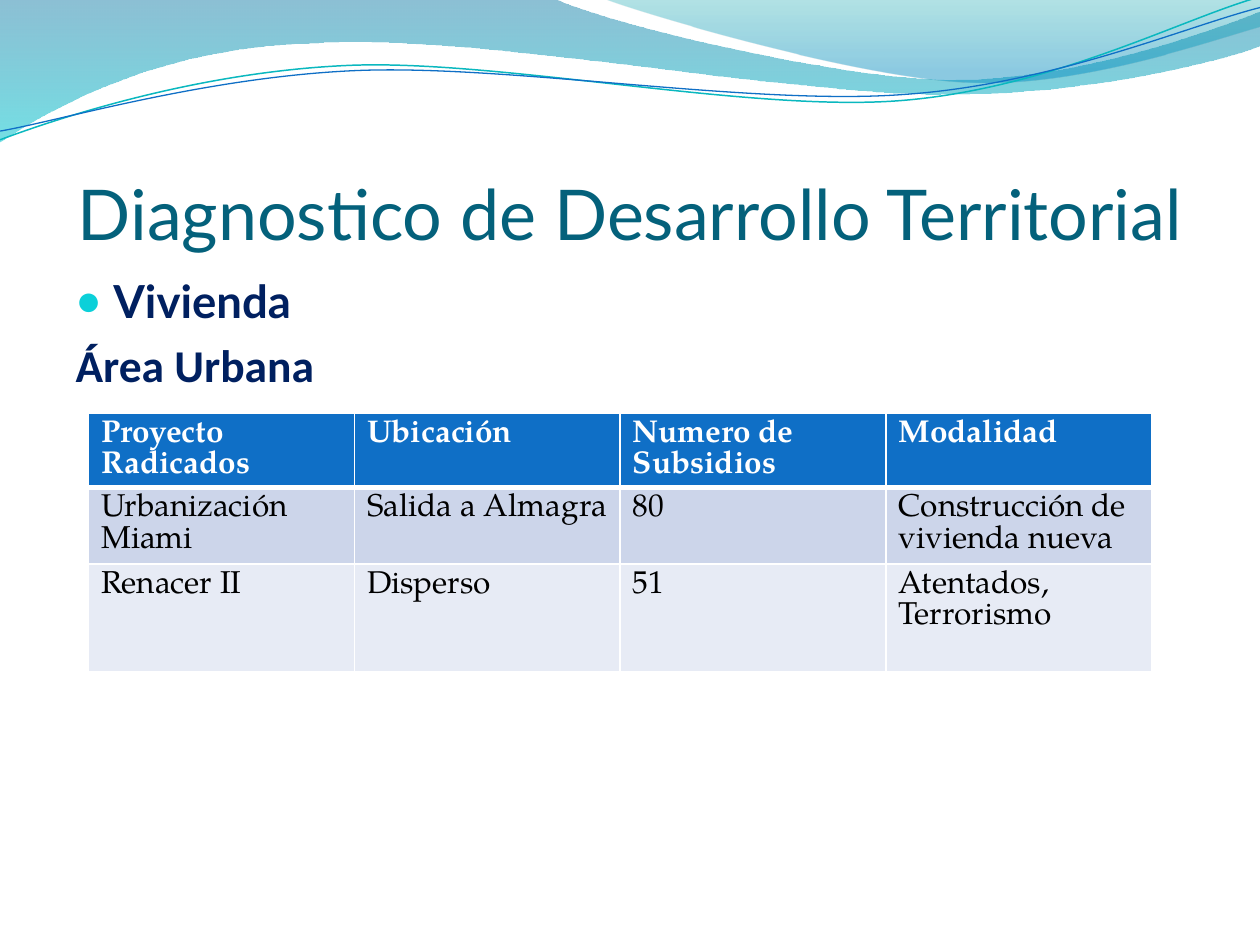
from lxml.etree import SubElement
from pptx import Presentation
from pptx.dml.color import RGBColor
from pptx.enum.text import MSO_ANCHOR, MSO_AUTO_SIZE, PP_ALIGN
from pptx.oxml.ns import qn
from pptx.util import Pt

BLUE, NAVY, TEAL, WHITE = "0F6FC6", "002060", "04617B", "FFFFFF"
SERIF = "TeX Gyre Pagella"

# Outlines in points: a pair is a straight step, six numbers a Bezier curve
BAND = [(0, 0), (316.8, -0.7),
        (342.7, 12.2, 478, 45.4, 545.8, 45.4),
        (614, 45.4, 690, 18.7, 720, 6.5), (720.7, 25.9),
        (707.8, 31.7, 626.4, 54.7, 537.1, 54),
        (447.8, 54, 275, 20.2, 185, 24.5),
        (92.9, 25.9, 33.1, 59.8, -0.7, 81.4), (0, 0)]
SWELL = [(344.9, -0.7), (366.5, 7.9, 491, 44.6, 553.7, 46.8),
         (616.3, 49.7, 691.9, 23, 720, 15.1), (720, 0), (344.9, -0.7)]
CREST = [(0, 79.9), (34.6, 67, 113.8, 41, 199.4, 37.4),
         (284.4, 33.8, 427, 64.1, 513.4, 57.6),
         (599.8, 51.1, 675.4, 10.8, 718.6, -1.4)]
RIPPLE = [(0, 74.9), (33.8, 69.1, 118, 43.9, 203.8, 40.3),
          (290.2, 36.7, 429.8, 60.5, 516.2, 54),
          (601.9, 48.2, 677.5, 15.1, 720, 4.3)]

ROWS = [
    ["Proyecto Radicados", "Ubicación", "Numero de Subsidios", "Modalidad"],
    ["Urbanización Miami", "Salida a Almagra", "80",
     "Construcción de vivienda nueva"],
    ["Renacer II", "Disperso", "51", "Atentados, Terrorismo"],
]
FILLS = [BLUE, "CCD5EA", "E7EBF5"]


def color(code):
    return RGBColor.from_string(code)


def write(para, text, font="Lato", size=18, ink="000000", bold=False):
    run = para.add_run()
    run.text = text
    face = run.font
    face.name, face.size, face.bold = font, Pt(size), bold
    face.color.rgb = color(ink)


def draw(slide, parts, close):
    """Build the outline, then join each three curve points into one arc."""
    dots = [(Pt(part[i]), Pt(part[i + 1]))
            for part in parts for i in range(0, len(part), 2)]
    pen = slide.shapes.build_freeform(*dots[0])
    pen.add_line_segments(dots[1:], close=close)
    shape = pen.convert_to_shape()
    shape.shadow.inherit = False
    steps = iter(list(shape._element.iter(qn("a:lnTo"))))
    for part in parts[1:]:
        step = next(steps)
        if len(part) == 6:
            arc = step.makeelement(qn("a:cubicBezTo"))
            step.addprevious(arc)
            for leg in (step, next(steps), next(steps)):
                arc.append(leg[0])
                leg.getparent().remove(leg)
    return shape


def wave(slide, parts, stops):
    """Filled shape with a see-through gradient from top to bottom."""
    shape = draw(slide, parts, True)
    shape.line.fill.background()
    shape.fill.gradient()
    shape.fill.gradient_angle = 270
    for stop, (place, code, alpha) in zip(shape.fill.gradient_stops, stops):
        stop.position = place
        stop.color.rgb = color(code)
    tints = shape._element.spPr.iter(qn("a:srgbClr"))
    for tint, (place, code, alpha) in zip(tints, stops):
        SubElement(tint, qn("a:alpha"), val=str(alpha * 1000))


def curve(slide, parts, ink, width):
    shape = draw(slide, parts, False)
    shape.fill.background()
    shape.line.color.rgb = color(ink)
    shape.line.width = Pt(width)


def place(slide, shape, left, top, width, height):
    """Set a placeholder's box and bring it to the front."""
    shape.left, shape.top = Pt(left), Pt(top)
    shape.width, shape.height = Pt(width), Pt(height)
    shape.text_frame.auto_size = MSO_AUTO_SIZE.NONE
    slide.shapes._spTree.append(shape._element)
    return shape.text_frame


def bullet(para, mark=None):
    """Hanging indent, with a coloured mark or none."""
    props = para._p.get_or_add_pPr()
    props.set("marL", str(Pt(21.6)))
    props.set("indent", str(-Pt(21.6)))
    if mark:
        tint = SubElement(props, qn("a:buClr"))
        SubElement(tint, qn("a:srgbClr"), val="0BD0D9")
        SubElement(props, qn("a:buSzPct"), val="95000")
        SubElement(props, qn("a:buChar"), char=mark)
    else:
        SubElement(props, qn("a:buNone"))


def border(cell, low):
    """White cell lines; low is the width of the bottom one."""
    props = cell._tc.get_or_add_tcPr()
    for i, (side, width) in enumerate(
            [("lnL", 1), ("lnR", 1), ("lnT", 1), ("lnB", low)]):
        line = props.makeelement(qn("a:" + side), {"w": str(Pt(width))})
        fill = SubElement(line, qn("a:solidFill"))
        SubElement(fill, qn("a:srgbClr"), val=WHITE)
        props.insert(i, line)


def grid(slide, left, top, width, tall):
    frame = slide.shapes.add_table(len(ROWS), len(ROWS[0]), Pt(left), Pt(top),
                                   Pt(width), Pt(sum(tall)))
    table = frame.table
    for r, texts in enumerate(ROWS):
        table.rows[r].height = Pt(tall[r])
        head = r == 0
        for c, text in enumerate(texts):
            cell = table.cell(r, c)
            cell.fill.solid()
            cell.fill.fore_color.rgb = color(FILLS[r])
            border(cell, 3 if head else 1)
            write(cell.text_frame.paragraphs[0], text, font=SERIF,
                  ink=WHITE if head else "000000", bold=head)


def main():
    deck = Presentation()
    deck.slide_width, deck.slide_height = Pt(720), Pt(540)
    slide = deck.slides.add_slide(deck.slide_layouts[1])

    # Waves along the top
    wave(slide, BAND, [(0, "0074A1", 45), (1, "00C6CF", 55)])
    wave(slide, SWELL, [(0, "00A1A9", 30), (0.8, "008BBF", 45)])
    curve(slide, CREST, "0AB8BF", 0.85)
    curve(slide, RIPPLE, BLUE, 0.75)

    # Title
    frame = place(slide, slide.shapes.title, 36, 55.5, 648, 90)
    frame.vertical_anchor = MSO_ANCHOR.BOTTOM
    frame.margin_left = frame.margin_right = frame.margin_bottom = 0
    para = frame.paragraphs[0]
    para.alignment = PP_ALIGN.CENTER
    write(para, "Diagnostico de Desarrollo Territorial", size=40, ink=TEAL)

    # Headings above the table
    frame = place(slide, slide.placeholders[1], 36, 152.5, 648, 345.5)
    para = frame.paragraphs[0]
    bullet(para, "●")
    write(para, "Vivienda", size=26, ink=NAVY, bold=True)
    para = frame.add_paragraph()
    bullet(para)
    write(para, "Área Urbana", font="Calibri", size=26, ink=NAVY, bold=True)

    # Housing projects
    grid(slide, 50.7, 236.2, 607.5, [42, 43.6, 61.4])
    deck.save("out.pptx")


if __name__ == "__main__":
    main()
